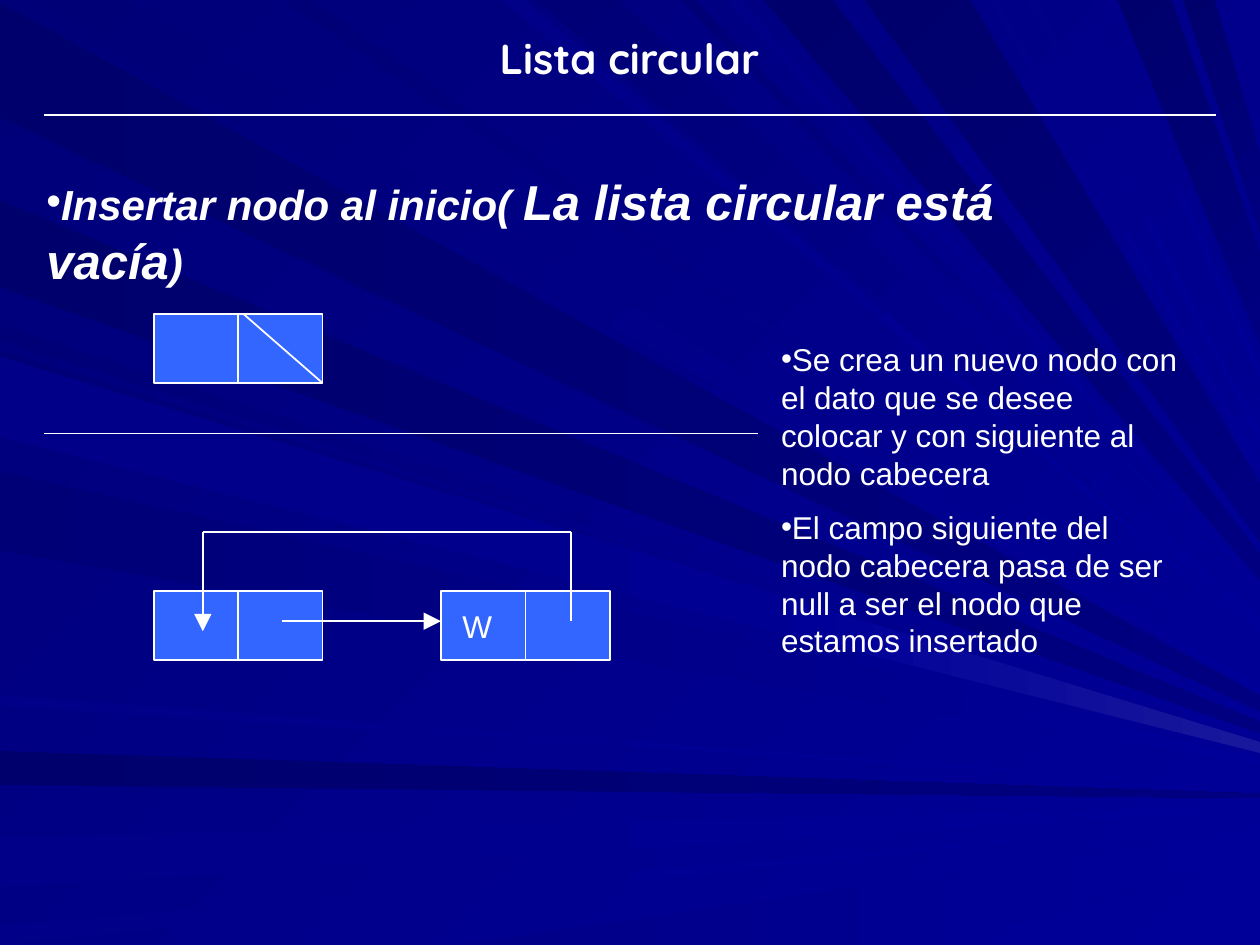
from dataclasses import dataclass
from itertools import pairwise

import lxml.etree
import pptx
import pptx.dml.color
import pptx.enum.shapes
import pptx.enum.text
import pptx.oxml.ns
import pptx.util
from pptx.util import Inches

qn = pptx.oxml.ns.qn


@dataclass(frozen=True)
class Theme:
    ink: str = "FFFFFF"
    node: str = "3366FF"
    back: tuple = ("000078", "000099")
    deep: tuple = ("00006C", "000080")
    middle: tuple = ("000076", "000099")
    faint: tuple = ("000088", "000099")
    glow: tuple = ("000099", "18189C")
    font: str = "Arial"
    title_font: str = "Quicksand"
    title: int = 24
    heading: int = 24
    heading_large: int = 28
    body: int = 18
    space: float = 9.5
    line: float = 1


THEME = Theme()
PAGE_WIDTH, PAGE_HEIGHT = 10, 7.5
NODE_WIDTH, NODE_HEIGHT = 1.34, 0.55
NODE_STEP = 2.28
LINK_DROP = 0.24  # from the top of a node to the arrow that leaves it
LOOP_RISE = 0.47  # from the top of a node up to the returning link

# Every ray runs from a span of one page edge towards this point off the right side.
FOCUS = (11.5, 6.35)
GLOW_START = 0.55  # share of the way to the focus at which a glow begins
RAY_ANGLES = {"left": 0, "top": 45, "bottom": 0}
RAY_SPANS = [
    ("left", THEME.deep, [(0.02, 0.93), (1.59, 2.28), (5.96, 6.23)]),
    ("left", THEME.middle, [(2.58, 2.7), (2.78, 3.42), (3.74, 4.37)]),
    ("left", THEME.faint, [(2.83, 3.47), (5.52, 5.6), (6.65, 7.04), (7.35, 7.5)]),
    ("top", THEME.deep, [(6.06, 6.61), (6.86, 7.7), (8.87, 9.3), (9.39, 9.64)]),
    ("top", THEME.middle, [(0.26, 1.01), (2.25, 2.47), (4.26, 4.92), (5.4, 5.52)]),
    ("top", THEME.faint, [(3.98, 4.16), (5.77, 5.88), (7.85, 7.92), (8.15, 8.24),
                          (8.65, 8.72)]),
    ("bottom", THEME.faint, [(3.64, 7.42)]),
]
GLOW_SPAN = (2.83, 3.47)


def rgb(value):
    return pptx.dml.color.RGBColor.from_string(value)


def paint_gradient(fill, colors, angle):
    """Fill with two colours; the angle is counted clockwise."""
    fill.gradient()
    fill.gradient_angle = (360 - angle) % 360
    for stop, color in zip(fill.gradient_stops, colors):
        stop.color.rgb = rgb(color)


def edge_point(edge, offset):
    return {"left": (0, offset),
            "top": (offset, 0),
            "bottom": (offset, PAGE_HEIGHT)}[edge]


def toward_focus(point, share):
    return tuple(Inches(a + (b - a) * share) for a, b in zip(point, FOCUS))


def add_ray(page, edge, span, colors, begin=0):
    """Draw the part of a ray between the share begin and the right page edge."""
    first, second = (edge_point(edge, offset) for offset in span)
    exits = [(PAGE_WIDTH - x) / (FOCUS[0] - x) for x, _ in (first, second)]
    corners = [toward_focus(first, begin), toward_focus(first, exits[0]),
               toward_focus(second, exits[1]), toward_focus(second, begin)]
    builder = page.shapes.build_freeform(*corners[0])
    builder.add_line_segments(corners[1:], close=True)
    ray = builder.convert_to_shape()
    ray.shadow.inherit = False
    ray.line.fill.background()
    paint_gradient(ray.fill, colors, RAY_ANGLES[edge])


def add_background(page):
    paint_gradient(page.background.fill, THEME.back, 45)
    for edge, colors, spans in RAY_SPANS:
        for span in spans:
            add_ray(page, edge, span, colors)
    add_ray(page, "left", GLOW_SPAN, THEME.glow, GLOW_START)


def set_outline(line):
    line.color.rgb = rgb(THEME.ink)
    line.width = pptx.util.Pt(THEME.line)


def add_route(page, *points, arrow=False):
    """Join points with straight lines, with an arrowhead on the last if asked."""
    for start, end in pairwise(points):
        connector = page.shapes.add_connector(
            pptx.enum.shapes.MSO_CONNECTOR.STRAIGHT, *map(Inches, start + end))
        set_outline(connector.line)
        lxml.etree.SubElement(connector._element.spPr, qn("a:effectLst"))
    if arrow:
        outline = connector._element.spPr.find(qn("a:ln"))
        lxml.etree.SubElement(outline, qn("a:tailEnd"), type="triangle", w="lg", len="lg")


def style(font, size, name=THEME.font):
    font.name = name
    font.size = pptx.util.Pt(size)
    font.color.rgb = rgb(THEME.ink)


def add_text_frame(page, left, top, width, height):
    box = page.shapes.add_textbox(*map(Inches, (left, top, width, height)))
    box.text_frame.word_wrap = True
    return box.text_frame


def add_bullet(para):
    props = para._p.get_or_add_pPr()
    props.set("marL", "0")
    props.set("indent", "0")
    lxml.etree.SubElement(props, qn("a:buFont"), typeface=THEME.font)
    lxml.etree.SubElement(props, qn("a:buChar"), char="•")


def add_title(page, left, top, width, height):
    para = add_text_frame(page, left, top, width, height).paragraphs[0]
    para.text = "Lista circular"
    para.alignment = pptx.enum.text.PP_ALIGN.CENTER
    style(para.font, THEME.title, THEME.title_font)
    para.font.bold = True


def add_heading(page, left, top, width, height):
    para = add_text_frame(page, left, top, width, height).paragraphs[0]
    add_bullet(para)
    for text, size in (("Insertar nodo al inicio( ", THEME.heading),
                       ("La lista circular está vacía", THEME.heading_large),
                       (")", THEME.heading)):
        span = para.add_run()
        span.text = text
        style(span.font, size)
        span.font.bold = span.font.italic = True


def add_steps(page, left, top, width, height):
    frame = add_text_frame(page, left, top, width, height)
    steps = ("Se crea un nuevo nodo con el dato que se desee colocar y con siguiente "
             "al nodo cabecera",
             "El campo siguiente del nodo cabecera pasa de ser null a ser el nodo que "
             "estamos insertado")
    for index, step in enumerate(steps):
        para = frame.add_paragraph() if index else frame.paragraphs[0]
        para.text = step
        if index:
            para.space_before = pptx.util.Pt(THEME.space)
        add_bullet(para)
        style(para.font, THEME.body)


def add_node(page, left, top, label=""):
    """Draw a list node: a data cell and a link cell."""
    node = page.shapes.add_shape(
        pptx.enum.shapes.MSO_SHAPE.RECTANGLE,
        *map(Inches, (left, top, NODE_WIDTH, NODE_HEIGHT)))
    node.shadow.inherit = False
    node.fill.solid()
    node.fill.fore_color.rgb = rgb(THEME.node)
    set_outline(node.line)
    if label:
        node.text_frame.margin_left = Inches(0.17)
        para = node.text_frame.paragraphs[0]
        para.text = label
        para.alignment = pptx.enum.text.PP_ALIGN.LEFT
        style(para.font, THEME.body)
    middle = left + NODE_WIDTH / 2
    add_route(page, (middle, top), (middle, top + NODE_HEIGHT))


def add_empty_list(page, left, top):
    """Draw one node whose link cell is struck through."""
    add_node(page, left, top)
    add_route(page, (left + 0.71, top), (left + NODE_WIDTH, top + NODE_HEIGHT))


def add_circular_list(page, left, top):
    """Draw two nodes, the second linked back to the first."""
    second = left + NODE_STEP
    link, loop = top + LINK_DROP, top - LOOP_RISE
    loop_start, loop_end = second + 1.03, left + 0.39
    add_node(page, left, top)
    add_node(page, second, top, "W")
    add_route(page, (left + 1.02, link), (second, link), arrow=True)
    add_route(page, (loop_start, link), (loop_start, loop),
              (loop_end, loop), (loop_end, top + 0.32), arrow=True)


def main():
    deck = pptx.Presentation()
    deck.slide_width, deck.slide_height = Inches(PAGE_WIDTH), Inches(PAGE_HEIGHT)
    page = deck.slides.add_slide(deck.slide_layouts[6])
    add_background(page)
    add_title(page, 0.27, 0.21, 9.45, 0.5)
    add_route(page, (0.35, 0.91), (9.65, 0.91))
    add_heading(page, 0.27, 1.31, 8.39, 0.57)
    add_empty_list(page, 1.22, 2.49)
    add_route(page, (0.35, 3.44), (6.02, 3.44))
    add_circular_list(page, 1.22, 4.69)
    add_steps(page, 6.1, 2.65, 3.39, 2.05)
    deck.save("out.pptx")


if __name__ == "__main__":
    main()
